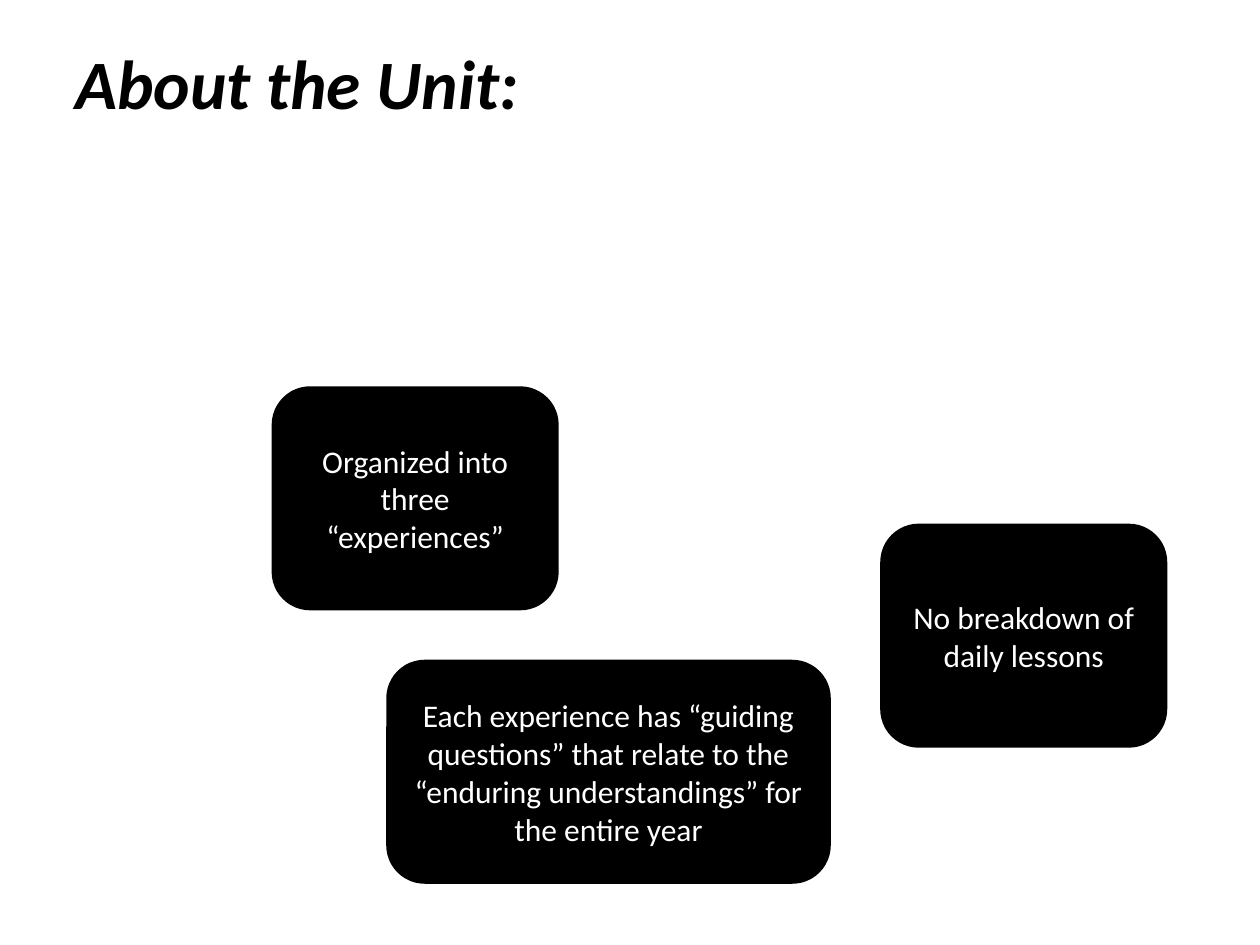
from pptx import Presentation
from pptx.dml.color import RGBColor
from pptx.enum.shapes import MSO_SHAPE as Shape
from pptx.enum.text import MSO_ANCHOR as Anchor, PP_ALIGN as Align
from pptx.util import Inches, Pt

BLACK = "000000"
WHITE = "FFFFFF"

TITLE_FORMAT = {"name": "Calibri", "size": Pt(39.6), "bold": True, "italic": True}
CARD_FORMAT = {"name": "Calibri", "size": Pt(18)}

# Card boxes (left, top, width, height) in inches, with their text
CARDS = [
    ((2.17, 3.08, 2.25, 1.75), "Organized into three “experiences”"),
    ((7, 4.17, 2.25, 1.75), "No breakdown of daily lessons"),
    ((3.08, 5.25, 3.5, 1.75),
     "Each experience has “guiding questions” that relate to the "
     "“enduring understandings” for the entire year"),
]


def paint(color_format, hex_color):
    color_format.rgb = RGBColor.from_string(hex_color)


def write_text(shape, text, font_format, hex_color, align):
    frame = shape.text_frame
    frame.word_wrap = True
    frame.vertical_anchor = Anchor.MIDDLE
    para = frame.paragraphs[0]
    para.alignment = align
    span = para.add_run()
    span.text = text
    for name, value in font_format.items():
        setattr(span.font, name, value)
    paint(span.font.color, hex_color)


def add_title(page, box, text):
    title = page.shapes.add_textbox(*map(Inches, box))
    write_text(title, text, TITLE_FORMAT, BLACK, Align.LEFT)


def add_card(page, box, text):
    card = page.shapes.add_shape(Shape.ROUNDED_RECTANGLE, *map(Inches, box))
    card.shadow.inherit = False
    card.fill.solid()
    paint(card.fill.fore_color, BLACK)
    paint(card.line.color, BLACK)
    card.line.width = Pt(2)
    write_text(card, text, CARD_FORMAT, WHITE, Align.CENTER)


def main():
    deck = Presentation()
    deck.slide_width, deck.slide_height = Inches(10), Inches(7.5)
    page = deck.slides.add_slide(deck.slide_layouts[6])

    # Heading
    add_title(page, (0.5, 0.3, 9, 0.7), "About the Unit:")

    # Facts about the unit
    for box, text in CARDS:
        add_card(page, box, text)

    deck.save("out.pptx")


if __name__ == "__main__":
    main()
